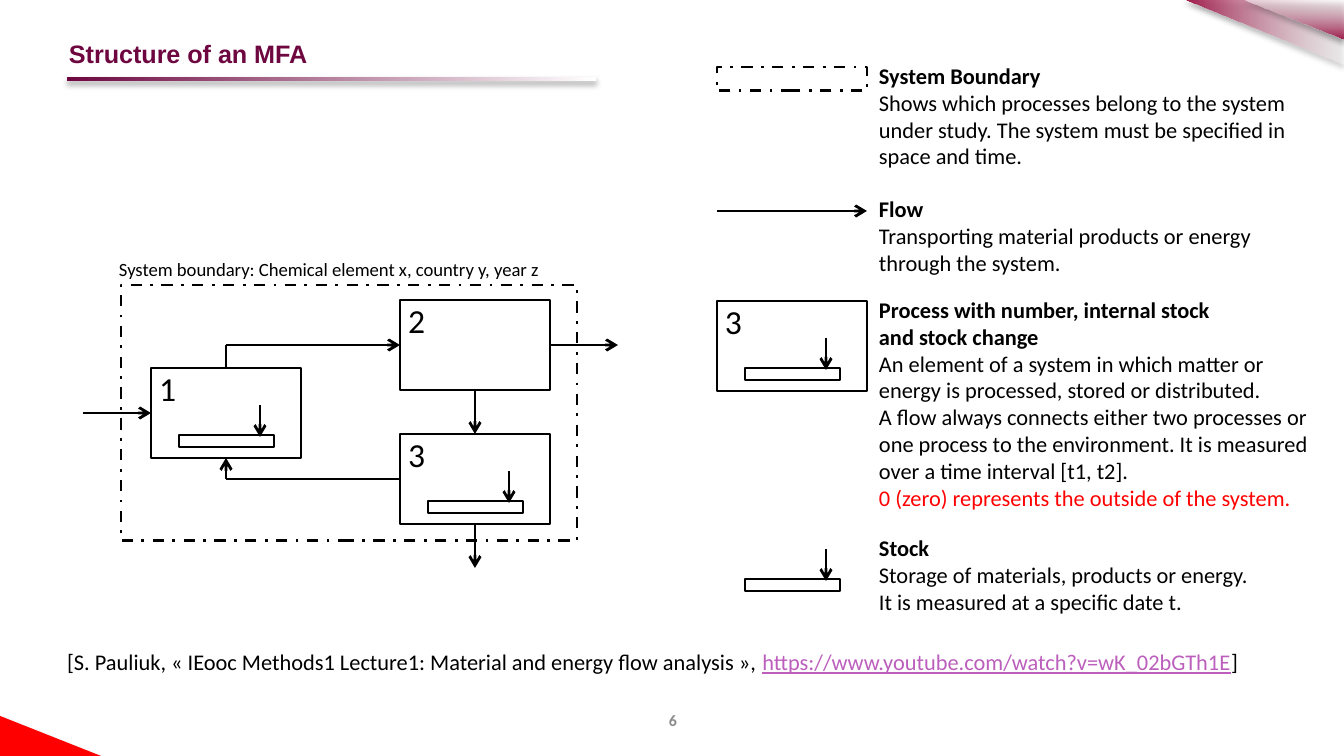
from lxml.etree import SubElement
from pptx import Presentation
from pptx.dml.color import RGBColor
from pptx.enum.dml import MSO_LINE
from pptx.enum.shapes import MSO_CONNECTOR, MSO_SHAPE
from pptx.enum.text import MSO_ANCHOR, MSO_AUTO_SIZE, PP_ALIGN
from pptx.oxml.ns import qn
from pptx.util import Pt

SCALE = 914400 * 10 / 1344
COLORS = {
    "plum": "6E0740",
    "berry": "9D1747",
    "white": "FFFFFF",
    "red": "FF0000",
    "black": "000000",
    "grey": "8C8C8C",
    "link": "BC5FBC",
}
PROCESS_SIZE = (150, 90)
TOP, LEFT, BOTTOM, RIGHT = range(4)


def px(value):
    return round(value * SCALE)


def rgb(name):
    return RGBColor.from_string(COLORS[name])


def write(frame, paragraphs, size=12, font="Calibri", color="black", bold=False,
          align=PP_ALIGN.LEFT, anchor=MSO_ANCHOR.TOP, margins=(13, 7, 13, 7)):
    """Fill a frame; each paragraph is a list of (text, overrides) runs."""
    frame.word_wrap = True
    frame.auto_size = MSO_AUTO_SIZE.NONE
    frame.vertical_anchor = anchor
    (frame.margin_left, frame.margin_top,
     frame.margin_right, frame.margin_bottom) = map(px, margins)
    for index, runs in enumerate(paragraphs):
        paragraph = frame.add_paragraph() if index else frame.paragraphs[0]
        paragraph.alignment = align
        for words, overrides in runs:
            run = paragraph.add_run()
            run.text = words
            run.font.name = font
            run.font.size = Pt(size)
            run.font.bold = overrides.get("bold", bold)
            run.font.underline = overrides.get("underline", False)
            run.font.color.rgb = rgb(overrides.get("color", color))


def text_box(slide, box, paragraphs, **formatting):
    frame = slide.shapes.add_textbox(*map(px, box)).text_frame
    write(frame, paragraphs, **formatting)


def drop_shadow(shape):
    shape.shadow.inherit = False
    effects = shape._element.spPr.find(qn("a:effectLst"))
    shadow = SubElement(effects, qn("a:outerShdw"), blurRad=str(Pt(3.1)),
                        dist=str(Pt(1.8)), dir="5400000", rotWithShape="0")
    tint = SubElement(shadow, qn("a:srgbClr"), val=COLORS["black"])
    SubElement(tint, qn("a:alpha"), val="35000")


def fade(shape, start, end, angle=0, white_alpha=100):
    shape.fill.gradient()
    shape.fill.gradient_angle = angle
    for stop, name in zip(shape.fill.gradient_stops, (start, end)):
        stop.color.rgb = rgb(name)
    for tint in shape._element.spPr.iter(qn("a:srgbClr")):
        if tint.get("val") == COLORS["white"]:
            SubElement(tint, qn("a:alpha"), val=str(white_alpha * 1000))


def corner(slide, points):
    builder = slide.shapes.build_freeform(*points[0], scale=SCALE)
    builder.add_line_segments(points[1:], close=True)
    shape = builder.convert_to_shape()
    shape.line.fill.background()
    return shape


def decorate(slide):
    rule = slide.shapes.add_shape(MSO_SHAPE.RECTANGLE, *map(px, (67, 77, 529, 4)))
    rule.line.fill.background()
    fade(rule, "plum", "white")
    large = corner(slide, [(1344, 65), (1184, 0), (1344, 0)])
    fade(large, "berry", "white", white_alpha=47)
    small = corner(slide, [(1344, 40), (1243, 0), (1344, 0)])
    fade(small, "white", "berry", angle=270, white_alpha=57)
    red = corner(slide, [(0, 716), (101, 756), (0, 756)])
    red.fill.solid()
    red.fill.fore_color.rgb = rgb("red")
    for shape in (rule, large, small, red):
        drop_shadow(shape)


def outline(slide, box, dash=None):
    shape = slide.shapes.add_shape(MSO_SHAPE.RECTANGLE, *map(px, box))
    shape.shadow.inherit = False
    shape.fill.background()
    shape.line.color.rgb = rgb("black")
    shape.line.width = Pt(1.5)
    if dash:
        shape.line.dash_style = dash
    return shape


def flow(slide, start, end, source=None, target=None, arrow=True):
    """Draw a flow; source and target are (process, side) joins."""
    line = slide.shapes.add_connector(MSO_CONNECTOR.STRAIGHT, *map(px, start + end))
    if source:
        line.begin_connect(*source)
    if target:
        line.end_connect(*target)
    line.line.color.rgb = rgb("black")
    line.line.width = Pt(1.5)
    if arrow:
        SubElement(line.line._get_or_add_ln(), qn("a:tailEnd"), type="arrow")
    SubElement(line._element.spPr, qn("a:effectLst"))


def stock(slide, x, y):
    """Draw a stock bar with its stock change arrow."""
    outline(slide, (x, y, 95, 12))
    flow(slide, (x + 81, y - 30), (x + 81, y + 2))


def process(slide, number, x, y, has_stock=True):
    shape = outline(slide, (x, y, *PROCESS_SIZE))
    write(shape.text_frame, [[(number, {})]], size=18, margins=(8, 0, 0, 0))
    if has_stock:
        stock(slide, x + 28, y + 67)
    return shape


def draw_system(slide):
    outline(slide, (121, 285, 456, 256), MSO_LINE.DASH_DOT)
    text_box(slide, (106, 251, 456, 36),
             [[("System boundary: Chemical element x, country y, year z", {})]], size=10)
    first = process(slide, "1", 151, 368)
    second = process(slide, "2", 400, 300, has_stock=False)
    third = process(slide, "3", 400, 434)
    flow(slide, (83, 413), (151, 413), target=(first, LEFT))
    flow(slide, (226, 368), (226, 345), source=(first, TOP), arrow=False)
    flow(slide, (226, 345), (400, 345), target=(second, LEFT))
    flow(slide, (550, 345), (618, 345), source=(second, RIGHT))
    flow(slide, (475, 390), (475, 434), source=(second, BOTTOM), target=(third, TOP))
    flow(slide, (475, 524), (475, 568), source=(third, BOTTOM))
    flow(slide, (400, 479), (226, 479), source=(third, LEFT), arrow=False)
    flow(slide, (226, 479), (226, 458), target=(first, BOTTOM))


def draw_legend(slide):
    outline(slide, (717, 67, 150, 24), MSO_LINE.DASH_DOT)
    flow(slide, (717, 211), (867, 211))
    process(slide, "3", 717, 301)
    stock(slide, 745, 579)
    entries = [
        (55, 478, ["System Boundary"],
         ["Shows which processes belong to the system under study. "
          "The system must be specified in space and time."], []),
        (188, 430, ["Flow"],
         ["Transporting material products or energy through the system."], []),
        (289, 462, ["Process with number, internal stock", "and stock change"],
         ["An element of a system in which matter or energy is processed, "
          "stored or distributed.",
          "A flow always connects either two processes or one process to the "
          "environment. It is measured over a time interval [t1, t2]."],
         ["0 (zero) represents the outside of the system."]),
        (527, 416, ["Stock"],
         ["Storage of materials, products or energy.",
          "It is measured at a specific date t."], []),
    ]
    for top, width, heading, description, warning in entries:
        paragraphs = ([[(line, {"bold": True})] for line in heading]
                      + [[(line, {})] for line in description]
                      + [[(line, {"color": "red"})] for line in warning])
        text_box(slide, (866, top, width, 14 + 27 * len(paragraphs)), paragraphs)


def main():
    deck = Presentation()
    deck.slide_width, deck.slide_height = px(1344), px(756)
    slide = deck.slides.add_slide(deck.slide_layouts[5])
    title = slide.shapes.title
    title.left, title.top, title.width, title.height = map(px, (56, 38, 1210, 31))
    write(title.text_frame, [[("Structure of an MFA", {})]], size=13.5, font="Arial",
          color="plum", bold=True, anchor=MSO_ANCHOR.MIDDLE, margins=(13, 0, 0, 0))
    decorate(slide)
    draw_system(slide)
    draw_legend(slide)
    citation = [
        ("[S. Pauliuk, «\u00a0IEooc Methods1 Lecture1: Material and energy flow "
         "analysis\u00a0», ".replace("\u00a0", " "), {}),
        ("https://www.youtube.com/watch?v=wK_02bGTh1E",
         {"color": "link", "underline": True}),
        ("]", {}),
    ]
    text_box(slide, (40, 641, 1211, 41), [citation], align=PP_ALIGN.RIGHT)
    text_box(slide, (460, 700, 426, 41), [[("6", {})]], size=8.5, color="grey",
             bold=True, align=PP_ALIGN.CENTER, anchor=MSO_ANCHOR.MIDDLE)
    deck.save("out.pptx")


if __name__ == "__main__":
    main()
